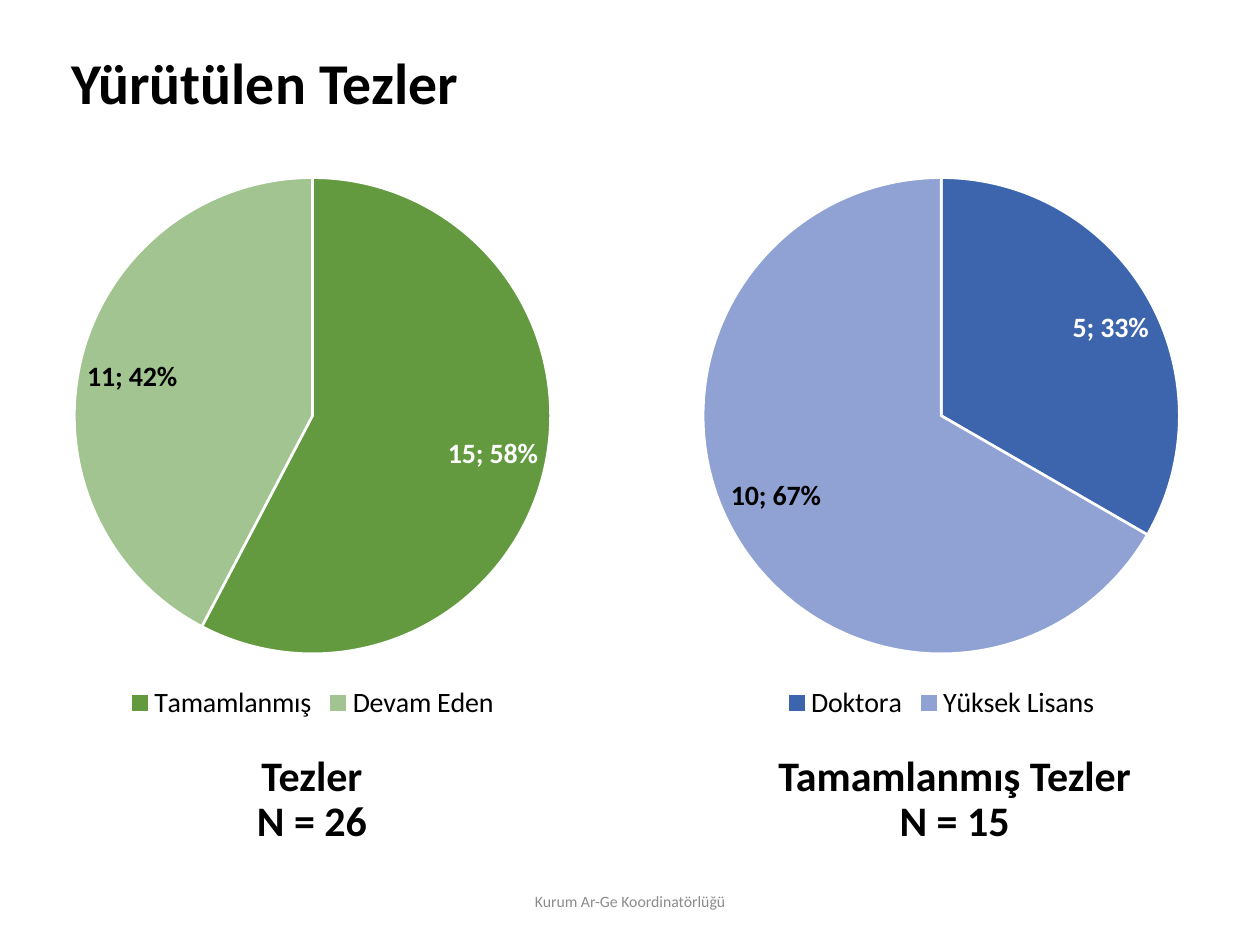
from dataclasses import dataclass

from lxml.etree import SubElement
from pptx import Presentation
from pptx.chart.data import CategoryChartData
from pptx.dml.color import RGBColor
from pptx.enum.chart import XL_CHART_TYPE, XL_LABEL_POSITION, XL_LEGEND_POSITION
from pptx.enum.text import MSO_ANCHOR, PP_ALIGN
from pptx.oxml.ns import qn
from pptx.util import Cm, Pt


def rgb(value):
    return RGBColor.from_string(value)


@dataclass
class Deck:
    s: object
    font: str = "Calibri"
    ink: str = "000000"
    paper: str = "FFFFFF"

    def style(self, font, size, color=None, bold=False):
        for name, value in {"name": self.font, "size": Pt(size), "bold": bold}.items():
            setattr(font, name, value)
        font.color.rgb = rgb(color or self.ink)

    def text(self, box, lines, size, color=None, bold=True, align=PP_ALIGN.CENTER, spacing=0.9):
        tf = self.s.shapes.add_textbox(*map(Cm, box)).text_frame
        tf.word_wrap = True
        tf.vertical_anchor = MSO_ANCHOR.MIDDLE
        for i, line in enumerate(lines):
            p = tf.paragraphs[0] if i == 0 else tf.add_paragraph()
            for name, value in {"alignment": align, "line_spacing": spacing}.items():
                setattr(p, name, value)
            r = p.add_run()
            r.text = line
            self.style(r.font, size, color, bold)

    def pie(self, box, slices):
        data = CategoryChartData()
        data.categories = [name for name, _, _, _ in slices]
        data.add_series("Tezler", [value for _, value, _, _ in slices])
        chart = self.s.shapes.add_chart(XL_CHART_TYPE.PIE, *map(Cm, box), data).chart
        chart.has_title = False
        self.style(chart.font, 16)
        chart.has_legend = True
        chart.legend.position = XL_LEGEND_POSITION.BOTTOM
        chart.legend.include_in_layout = False
        self.style(chart.legend.font, 16)
        plot = chart.plots[0]
        plot.vary_by_categories = True
        for i, (_, _, fill, label_color) in enumerate(slices):
            point = plot.series[0].points[i]
            point.format.fill.solid()
            point.format.fill.fore_color.rgb = rgb(fill)
            point.format.line.color.rgb = rgb(self.paper)
            point.format.line.width = Pt(1.5)
            self.style(point.data_label.font, 16, label_color, True)
            point.data_label.position = XL_LABEL_POSITION.BEST_FIT
        for label in chart.element.iter(qn("c:dLbl")):
            label.find(qn("c:showPercent")).set("val", "1")
            SubElement(label, qn("c:separator")).text = "; "


def main():
    prs = Presentation()
    prs.slide_width, prs.slide_height = Cm(25.4), Cm(19.05)
    deck = Deck(prs.slides.add_slide(prs.slide_layouts[6]))

    deck.text((1.19, 0.58, 21.9, 2.31), ["Yürütülen Tezler"], 33, align=PP_ALIGN.LEFT)
    deck.text((8.41, 17.65, 8.58, 1.02), ["Kurum Ar-Ge Koordinatörlüğü"], 9,
              color="8C8C8C", bold=False, spacing=1.0)
    deck.text((4.17, 15.21, 4.24, 1.85), ["Tezler", "N = 26"], 24)
    deck.text((15.37, 15.21, 7.75, 1.85), ["Tamamlanmış Tezler", "N = 15"], 24)

    deck.pie((0, 3.23, 12.6, 11.4), [
        ("Tamamlanmış", 15, "639A3F", deck.paper),
        ("Devam Eden", 11, "A1C490", deck.ink),
    ])
    deck.pie((12.55, 3.23, 12.85, 11.4), [
        ("Doktora", 5, "3C65AE", deck.paper),
        ("Yüksek Lisans", 10, "90A2D3", deck.ink),
    ])
    prs.save("out.pptx")


if __name__ == "__main__":
    main()
